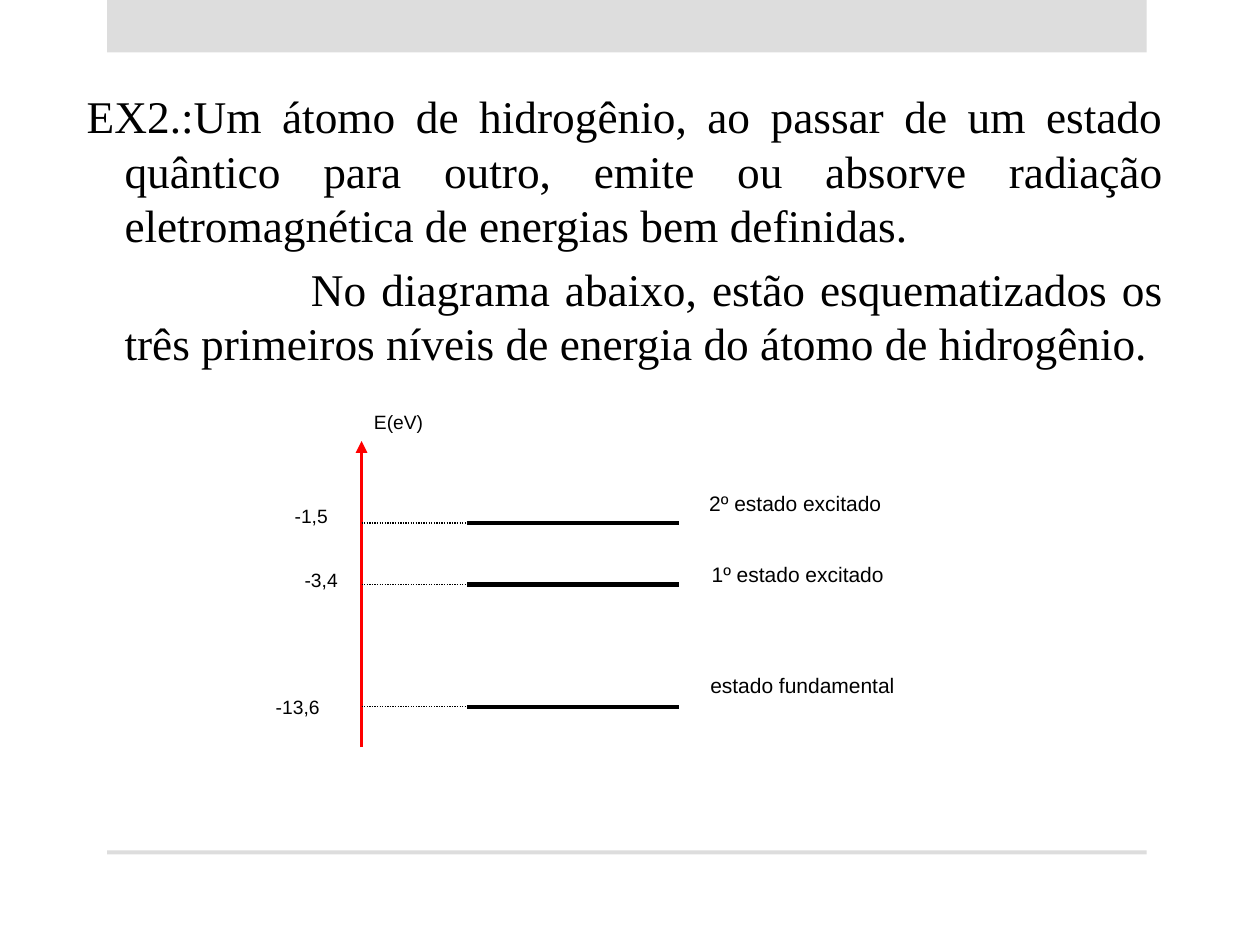
from pptx import Presentation
from pptx.dml.color import RGBColor
from pptx.enum.dml import MSO_LINE
from pptx.enum.shapes import MSO_CONNECTOR, MSO_SHAPE
from pptx.enum.text import PP_ALIGN
from pptx.oxml.ns import qn
from pptx.util import Pt
from lxml.etree import SubElement

BLACK = RGBColor(0x00, 0x00, 0x00)
RED = RGBColor(0xFF, 0x00, 0x00)
GREY = RGBColor(0xDD, 0xDD, 0xDD)

AXIS_X, LEVEL_START, LEVEL_END = 206.6, 267.1, 388.1
HANGING = 21.6

STATEMENT = [
    ("EX2.:Um átomo de hidrogênio, ao passar de um estado quântico para outro, "
     "emite ou absorve radiação eletromagnética de energias bem definidas.", -HANGING, 0),
    ("No diagrama abaixo, estão esquematizados os três primeiros níveis de "
     "energia do átomo de hidrogênio.", 106.5, 5.2),
]

# Level height, line weight, energy and its position, state and its position
LEVELS = [
    (298.8, 2.25, "-1,5", (161.3, 284.4), "2º estado excitado", (398.2, 276.5)),
    (334.1, 3, "-3,4", (167, 321.1), "1º estado excitado", (399.6, 317.5)),
    (403.9, 2.25, "-13,6", (150.5, 393.8), "estado fundamental", (398.8, 380.9)),
]


def add_band(slide, top, height):
    """Add a grey band across the slide."""
    band = slide.shapes.add_shape(MSO_SHAPE.RECTANGLE, Pt(61.2), Pt(top), Pt(594), Pt(height))
    band.shadow.inherit = False
    band.fill.solid()
    band.fill.fore_color.rgb = GREY
    band.line.fill.background()


def add_statement(slide):
    """Add the justified text of the exercise."""
    statement = slide.shapes.add_textbox(Pt(42.5), Pt(50.5), Pt(629.3), Pt(172))
    frame = statement.text_frame
    frame.word_wrap = True
    frame.margin_top = frame.margin_bottom = 0
    for index, (text, indent, space_before) in enumerate(STATEMENT):
        paragraph = frame.add_paragraph() if index else frame.paragraphs[0]
        paragraph.text = text
        paragraph.alignment = PP_ALIGN.JUSTIFY
        paragraph.line_spacing = Pt(31.1)
        paragraph.space_before = Pt(space_before)
        paragraph.font.name = "Times New Roman"
        paragraph.font.size = Pt(25.9)
        paragraph.font.color.rgb = BLACK
        properties = paragraph._p.get_or_add_pPr()
        properties.set("marL", str(Pt(HANGING)))
        properties.set("indent", str(Pt(indent)))


def add_line(slide, start, end, color, weight):
    """Add a straight line between two points and return it."""
    line = slide.shapes.add_connector(
        MSO_CONNECTOR.STRAIGHT, *(Pt(value) for value in (*start, *end)))
    line.line.color.rgb = color
    line.line.width = Pt(weight)
    SubElement(line._element.spPr, qn("a:effectLst"))
    return line


def add_label(slide, text, position, width, size):
    """Add a one-line label of the diagram."""
    left, top = position
    label = slide.shapes.add_textbox(Pt(left), Pt(top), Pt(width), Pt(size * 1.15 + 7.2))
    label.text_frame.word_wrap = True
    paragraph = label.text_frame.paragraphs[0]
    paragraph.text = text
    paragraph.font.name = "Arial"
    paragraph.font.size = Pt(size)
    paragraph.font.color.rgb = BLACK


def add_axis(slide):
    """Add the energy axis with its arrowhead and label."""
    axis = add_line(slide, (AXIS_X, 427), (AXIS_X, 252), RED, 2.25)
    SubElement(axis.line._get_or_add_ln(), qn("a:tailEnd"), type="triangle")
    add_label(slide, "E(eV)", (AXIS_X, 231.1), 57, 11)


def add_level(slide, height, weight, energy, energy_position, state, state_position):
    """Add an energy level with its guide and labels."""
    guide = add_line(slide, (AXIS_X, height), (LEVEL_START, height), BLACK, 0.75)
    guide.line.dash_style = MSO_LINE.ROUND_DOT
    add_line(slide, (LEVEL_START, height), (LEVEL_END, height), BLACK, weight)
    add_label(slide, energy, energy_position, 45, 11)
    add_label(slide, state, state_position, 175, 12)


def main():
    """Build the slide and save it."""
    presentation = Presentation()
    presentation.slide_width, presentation.slide_height = Pt(720), Pt(540)
    slide = presentation.slides.add_slide(presentation.slide_layouts[6])
    add_band(slide, 0, 30)
    add_band(slide, 486, 2.2)
    add_statement(slide)
    add_axis(slide)
    for level in LEVELS:
        add_level(slide, *level)
    presentation.save("out.pptx")


if __name__ == "__main__":
    main()
